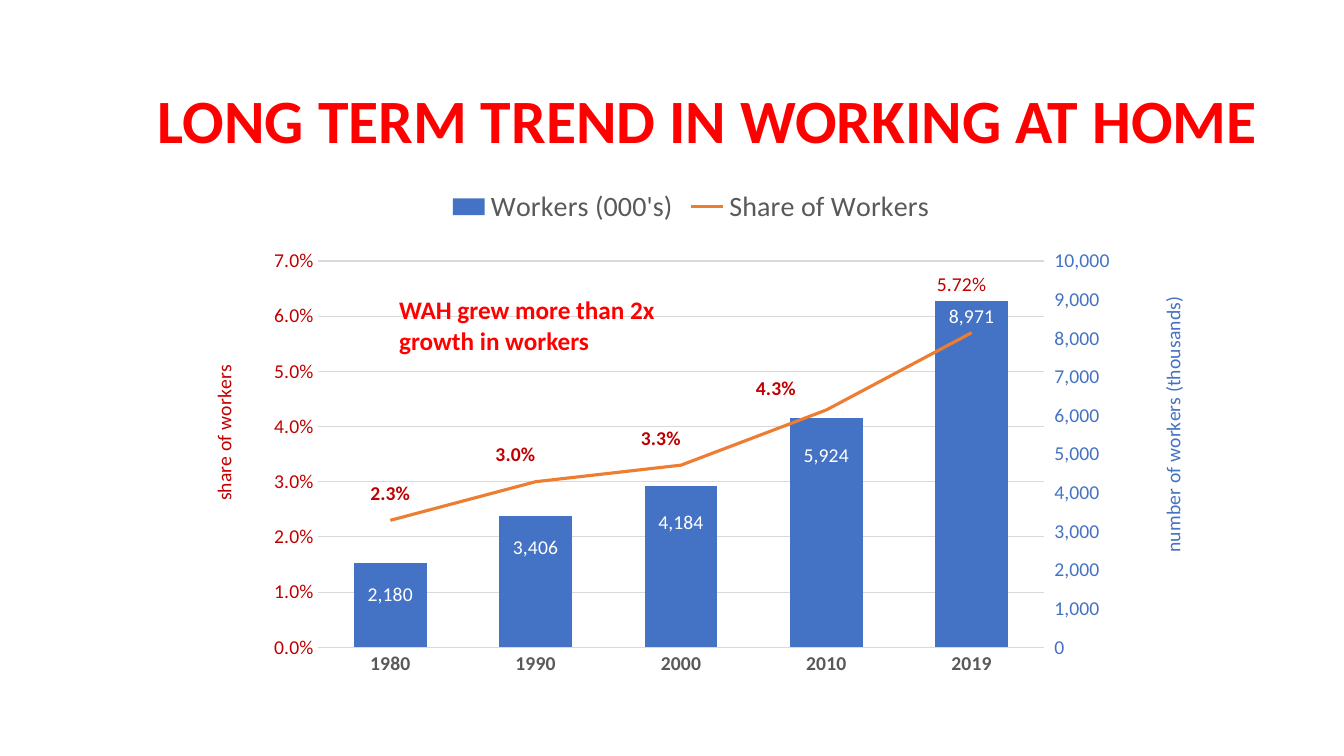
from copy import deepcopy
from lxml import etree
from pptx import Presentation, util as u
from pptx.chart import axis as ax, data as cd
from pptx.dml.color import RGBColor
from pptx.enum import chart as ec, text as et
from pptx.oxml import ns

RED = RGBColor(0xFF, 0, 0)
DARK = RGBColor(0xC0, 0, 0)
BLUE = RGBColor(0x44, 0x72, 0xC4)
ORANGE = RGBColor(0xED, 0x7D, 0x31)
GRAY = RGBColor(0x59, 0x59, 0x59)
GRID = RGBColor(0xD9, 0xD9, 0xD9)
WHITE = RGBColor(0xFF, 0xFF, 0xFF)
FACE = "Calibri"

YEARS = ["1980", "1990", "2000", "2010", "2019"]
COUNTS = [2180, 3406, 4184, 5924, 8971]
SHARES = [0.023, 0.03, 0.033, 0.043, 0.057]
# Label shifts as parts of the chart's width and height
COUNT_MOVES = [(0, 0.03), (0, 0.03), (0, 0.04), (0, 0.04), (0, 0)]
SHARE_MOVES = [(0, -0.02), (-0.02, -0.02), (-0.02, -0.02),
               (-0.05, -0.01), (-0.01, -0.06)]


def style(font, size, color, bold=False):
    font.name, font.size, font.bold = FACE, u.Pt(size), bold
    font.color.rgb = color


def write(frame, words, size=18, color=RED, bold=True, space=None):
    frame.text = words
    para = frame.paragraphs[0]
    para.alignment = et.PP_ALIGN.LEFT
    if space:
        para.line_spacing = space
    style(para.runs[0].font, size, color, bold)


def node(tag, **attrs):
    item = etree.Element(ns.qn("c:" + tag))
    for key, val in attrs.items():
        item.set(key, str(val))
    return item


def layout(**parts):
    """Build a manual layout from named parts."""
    outer, inner = node("layout"), node("manualLayout")
    outer.append(inner)
    for key, val in parts.items():
        inner.append(node(key, val=val))
    return outer


def split(chart):
    """Give the second series a line plot on the main axes."""
    area = chart._chartSpace.chart.plotArea
    bars = area.find(ns.qn("c:barChart"))
    line = node("lineChart")
    line.append(node("grouping", val="standard"))
    line.append(node("varyColors", val=0))
    ser = bars.findall(ns.qn("c:ser"))[1]
    for flag in ser.findall(ns.qn("c:invertIfNegative")):
        ser.remove(flag)
    line.append(ser)
    line.append(node("marker", val=1))
    bars.addnext(line)

    # The line's axes come first, the columns' axes last
    cat, val = [area.find(ns.qn("c:" + tag)) for tag in ("catAx", "valAx")]
    firsts = [deepcopy(cat), deepcopy(val)]
    ids = {item.find(ns.qn("c:axId")).get("val"): str(n)
           for n, item in enumerate((cat, val), 5001)}
    for item in firsts:
        for tag in ("axId", "crossAx"):
            ref = item.find(ns.qn("c:" + tag))
            ref.set("val", ids[ref.get("val")])
        cat.addprevious(item)
    for ref in ids.values():
        line.append(node("axId", val=ref))
    val.find(ns.qn("c:axPos")).set("val", "r")
    val.find(ns.qn("c:crosses")).set("val", "max")

    for old in area.findall(ns.qn("c:layout")):
        area.remove(old)
    area.insert(0, layout(layoutTarget="inner", xMode="edge", yMode="edge",
                          x=0.13, y=0.16, w=0.72, h=0.73))
    return [ax.CategoryAxis(firsts[0]), ax.ValueAxis(firsts[1]),
            ax.CategoryAxis(cat), ax.ValueAxis(val)]


def scale(axis, words, color, top, step, form, tick, x, y):
    """Format one value axis and place its title."""
    axis.minimum_scale, axis.maximum_scale, axis.major_unit = 0, top, step
    axis.major_tick_mark = tick
    axis.format.line.fill.background()
    marks = axis.tick_labels
    marks.number_format, marks.number_format_is_linked = form, False
    style(marks.font, 14, color)
    title = axis.axis_title
    write(title.text_frame, words, size=14, color=color, bold=False)
    body = title._element.find(".//" + ns.qn("a:bodyPr"))
    body.set("rot", "-5400000")
    body.set("vert", "horz")
    for old in title._element.findall(ns.qn("c:layout")):
        title._element.remove(old)
    title._element.find(ns.qn("c:tx")).addnext(
        layout(xMode="edge", yMode="edge", x=x, y=y))


def label(ser, moves, place, color, form, bold=False):
    """Label each point, shifted from its usual place."""
    tags = ser.data_labels
    tags.show_value = True
    tags.number_format, tags.number_format_is_linked = form, False
    style(tags.font, 14, color, bold)
    for flag in tags._element.iter(ns.qn("c:showLeaderLines")):
        flag.set("val", "0")
    for n, (x, y) in enumerate(moves):
        tag = ser.points[n].data_label
        style(tag.font, 14, color, bold)
        tag.position = place
        item = tags._element.findall(ns.qn("c:dLbl"))[n]
        shift = layout(x=x, y=y)
        item.find(ns.qn("c:idx")).addnext(shift)
        shift.addnext(node("numFmt", formatCode=form, sourceLinked=0))


def trend(slide, left, top, width, height):
    data = cd.CategoryChartData()
    data.categories = YEARS
    data.add_series("Workers (000's)", COUNTS, "#,##0")
    data.add_series("Share of Workers", SHARES, "0.0%")
    chart = slide.shapes.add_chart(
        ec.XL_CHART_TYPE.COLUMN_CLUSTERED, u.Pt(left), u.Pt(top),
        u.Pt(width), u.Pt(height), data).chart
    chart.has_title = False
    style(chart.font, 10, RGBColor(0, 0, 0))
    chart.value_axis.has_major_gridlines = False
    years, share, spare, number = split(chart)

    # Axes
    tick = ec.XL_TICK_MARK
    spare.visible = False
    scale(number, "number of workers (thousands)", BLUE, 10000, 1000,
          "#,##0", tick.OUTSIDE, 0.96, 0.22)
    scale(share, "share of workers", DARK, 0.07, 0.01,
          "0.0%", tick.NONE, 0.02, 0.35)
    share.has_major_gridlines = True
    years.major_tick_mark = tick.NONE
    style(years.tick_labels.font, 14, GRAY, True)
    for edge in (share.major_gridlines.format.line, years.format.line):
        edge.color.rgb, edge.width = GRID, u.Pt(0.75)

    # Series
    bars, line = chart.plots
    bars.gap_width, bars.vary_by_categories = 100, False
    count, rate = bars.series[0], line.series[0]
    count.format.fill.solid()
    count.format.fill.fore_color.rgb = BLUE
    rate.format.line.color.rgb, rate.format.line.width = ORANGE, u.Pt(2.25)
    rate.marker.style, rate.smooth = ec.XL_MARKER_STYLE.NONE, False
    spot = ec.XL_LABEL_POSITION
    label(count, COUNT_MOVES, spot.INSIDE_END, WHITE, "#,##0")
    label(rate, SHARE_MOVES, spot.ABOVE, DARK, "0.0%", bold=True)
    write(rate.points[4].data_label.text_frame, "5.72%",
          size=14, color=DARK, bold=False)

    # Legend
    chart.has_legend = True
    chart.legend.position = ec.XL_LEGEND_POSITION.TOP
    chart.legend.include_in_layout = False
    style(chart.legend.font, 20, GRAY)


def head(slide, left, top, width, height):
    box = slide.shapes.title
    box.left, box.top = u.Pt(left), u.Pt(top)
    box.width, box.height = u.Pt(width), u.Pt(height)
    frame = box.text_frame
    frame.auto_size = et.MSO_AUTO_SIZE.NONE
    frame.vertical_anchor = et.MSO_ANCHOR.MIDDLE
    write(frame, "LONG TERM TREND IN WORKING AT HOME", size=44, space=0.9)


def remark(slide, left, top, width, height):
    box = slide.shapes.add_textbox(u.Pt(left), u.Pt(top),
                                   u.Pt(width), u.Pt(height))
    box.text_frame.word_wrap = True
    write(box.text_frame, "WAH grew more than 2x growth in workers")


def main():
    deck = Presentation()
    deck.slide_width, deck.slide_height = u.Pt(960), u.Pt(540)
    slide = deck.slides.add_slide(deck.slide_layouts[5])
    head(slide, 105.5, 36, 828, 104.4)
    trend(slide, 133.2, 126, 721, 378)
    remark(slide, 278, 207, 211, 51)
    deck.save("out.pptx")


if __name__ == "__main__":
    main()
